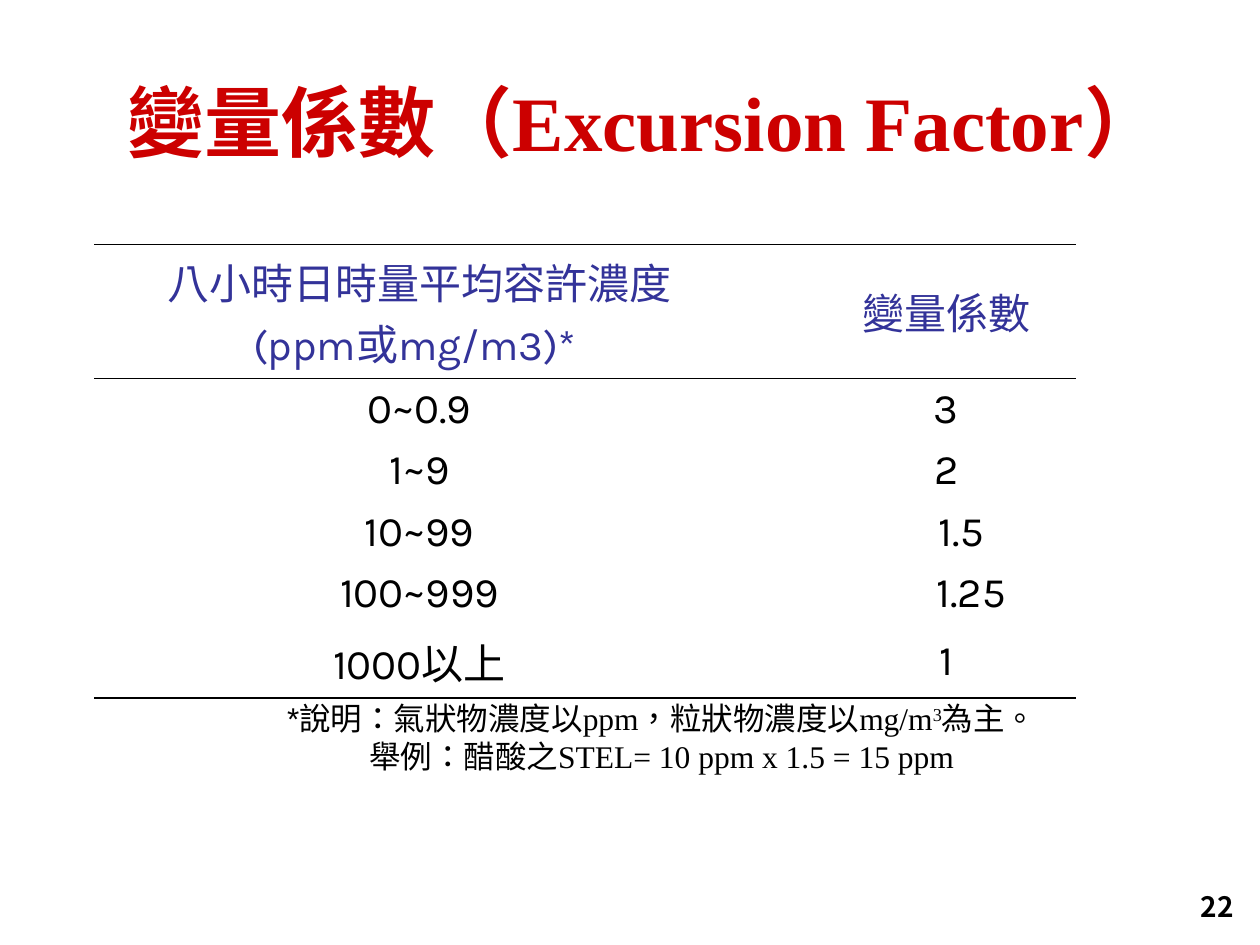
"""Build the excursion factor slide with its table and notes."""
from lxml.etree import SubElement
from pptx import Presentation
from pptx.dml.color import RGBColor
from pptx.enum.text import MSO_ANCHOR as Anchor, PP_ALIGN as Align
from pptx.oxml.ns import qn
from pptx.util import Cm, Pt

COLORS = {"title": "CC0000", "header": "333399", "body": "000000"}
SANS, SERIF = "Karla", "Times New Roman"


def add_runs(paragraph, runs, size, color, bold=False, align=Align.CENTER):
    paragraph.alignment = align
    for text, face in runs:
        run = paragraph.add_run()
        run.text = text
        run.font.name = face
        run.font.size = Pt(size)
        run.font.bold = bold
        run.font.color.rgb = RGBColor.from_string(COLORS[color])
        run._r.get_or_add_rPr().set("lang", "zh-TW")


def set_borders(cell, ruled_sides):
    properties = cell._tc.get_or_add_tcPr()
    for side in "LRTB":
        line = SubElement(properties, qn(f"a:ln{side}"), w=str(Pt(1)))
        if side in ruled_sides:
            fill = SubElement(line, qn("a:solidFill"))
            SubElement(fill, qn("a:srgbClr"), val=COLORS["body"])
        else:
            SubElement(line, qn("a:noFill"))


deck = Presentation()
deck.slide_width, deck.slide_height = Cm(25.4), Cm(19.05)
slide = deck.slides.add_slide(deck.slide_layouts[6])

title = slide.shapes.add_textbox(Cm(1.3), Cm(0.84), Cm(23.39), Cm(3.18)).text_frame
title.word_wrap = True
title.vertical_anchor = Anchor.MIDDLE
add_runs(title.paragraphs[0], [("變量係數（", SANS), ("Excursion Factor）", SERIF)],
         44, "title", bold=True)

rows = [
    (["八小時日時量平均容許濃度", "(ppm或mg/m3)* "], ["變量係數"], 2.7, 0),
    (["0~0.9"], ["3"], 1.24, 0),
    (["1~9"], ["2"], 1.24, 0),
    (["10~99"], ["1.5"], 1.24, 0.6),
    (["100~999"], ["1.25"], 1.24, 1),
    (["1000以上"], ["1"], 1.48, 0),
]
factors = slide.shapes.add_table(len(rows), 3, Cm(1.9), Cm(4.93), Cm(19.8), Cm(9.14)).table
factors.first_row = False
factors.horz_banding = False
for column, width in zip(factors.columns, (13.11, 1.45, 5.24)):
    column.width = Cm(width)

ruled = {0: "TB", 1: "T", len(rows) - 1: "B"}
for row_index, (limits, factor, height, shift) in enumerate(rows):
    factors.rows[row_index].height = Cm(height)
    for column_index, lines in enumerate((limits, [], factor)):
        cell = factors.cell(row_index, column_index)
        set_borders(cell, ruled.get(row_index, ""))
        cell.fill.background()
        cell.vertical_anchor = Anchor.MIDDLE
        cell.margin_top = cell.margin_bottom = Cm(0.05)
        if column_index == 2:
            cell.margin_left = Cm(0.25 + shift)
        for line_index, line in enumerate(lines):
            frame = cell.text_frame
            paragraph = frame.add_paragraph() if line_index else frame.paragraphs[0]
            add_runs(paragraph, [(line, SANS)], 24, "body" if row_index else "header")

notes = slide.shapes.add_textbox(Cm(0.64), Cm(13.97), Cm(25.4), Cm(2.57)).text_frame
notes.word_wrap = True
explanation = notes.paragraphs[0]
add_runs(explanation, [
    ("*", "Arial"), ("說明：氣狀物濃度以", SANS), ("ppm", SERIF),
    ("，粒狀物濃度以", SANS), ("mg/m", SERIF), ("3", SERIF), ("為主。", SANS),
], 18, "body")
explanation.runs[5]._r.get_or_add_rPr().set("baseline", "30000")
add_runs(notes.add_paragraph(),
         [("舉例：醋酸之", SANS), ("STEL= 10 ppm x 1.5 = 15 ppm", SERIF)], 18, "body")

page_number = slide.shapes.add_textbox(Cm(17.93), Cm(17.81), Cm(7.19), Cm(1.32)).text_frame
page_number.word_wrap = True
add_runs(page_number.paragraphs[0], [("22", "Noto Sans CJK SC")],
         16, "body", bold=True, align=Align.RIGHT)

deck.save("out.pptx")
